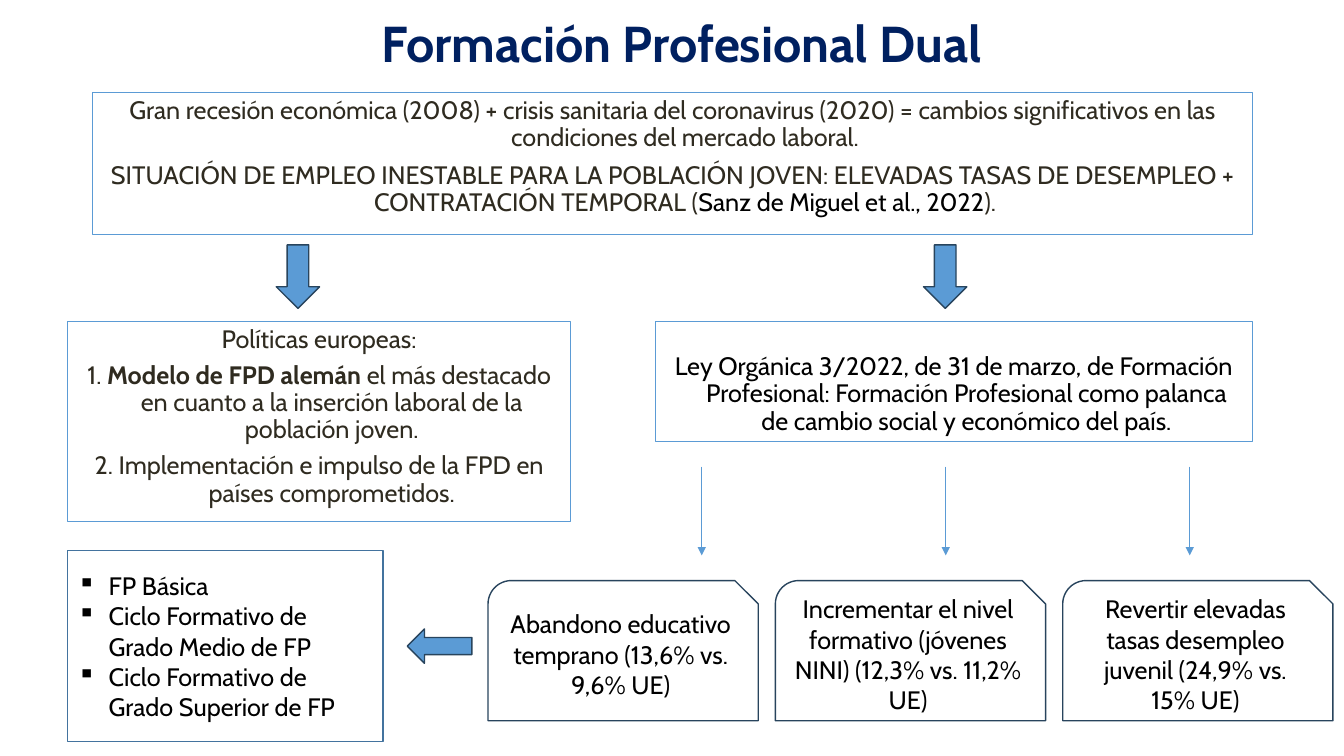
from lxml.etree import SubElement
from pptx import Presentation
from pptx.dml.color import RGBColor
from pptx.enum.shapes import MSO_CONNECTOR, MSO_SHAPE
from pptx.enum.text import MSO_ANCHOR, PP_ALIGN
from pptx.oxml.ns import qn
from pptx.util import Pt

PX = 9144
FONT = "Cabin"
COLORS = {
    "title": "002060",
    "text": "2F2B20",
    "black": "000000",
    "blue": "5B9BD5",
    "list_line": "43739E",
    "dark_line": "28445D",
}


def px(*lengths):
    """Turn pixel lengths into EMU."""
    return [length * PX for length in lengths]


def color(name):
    """Look up a named colour."""
    return RGBColor.from_string(COLORS[name])


def write_text(box, paragraphs, size=18, ink="black", align=PP_ALIGN.CENTER,
               anchor=MSO_ANCHOR.TOP, spacing=None, before=0, indent=0,
               bullet=None, top=5):
    """Fill a shape with paragraphs, each a list of (text, format) spans."""
    frame = box.text_frame
    frame.word_wrap = True
    frame.vertical_anchor = anchor
    frame.margin_left, frame.margin_top, frame.margin_right, frame.margin_bottom = px(10, top, 10, 5)
    for index, spans in enumerate(paragraphs):
        para = frame.add_paragraph() if index else frame.paragraphs[0]
        para.alignment = align
        para.line_spacing = spacing
        para.space_before = Pt(before if index else 0)
        properties = para._p.get_or_add_pPr()
        if indent:
            properties.set("marL", str(indent * PX))
            properties.set("indent", str(-indent * PX))
        if bullet:
            SubElement(properties, qn("a:buChar"), char=bullet)
        for text, style in spans:
            span = para.add_run()
            span.text = text
            span.font.name = FONT
            span.font.size = Pt(size)
            span.font.bold = style.get("bold", False)
            span.font.color.rgb = color(style.get("ink", ink))


def add_box(page, kind, place, line, width, fill=None):
    """Add an outlined shape, hollow unless a fill is named."""
    box = page.shapes.add_shape(kind, *px(*place))
    box.shadow.inherit = False
    if fill:
        box.fill.solid()
        box.fill.fore_color.rgb = color(fill)
    else:
        box.fill.background()
    box.line.color.rgb = color(line)
    box.line.width = Pt(width)
    return box


def add_block_arrow(page, kind, place):
    """Add a filled block arrow."""
    add_box(page, kind, place, "dark_line", 1, fill="blue")


def add_thin_arrow(page, x, top, bottom):
    """Add a thin downward arrow."""
    arrow = page.shapes.add_connector(MSO_CONNECTOR.STRAIGHT, *px(x, top, x, bottom))
    arrow.line.color.rgb = color("blue")
    arrow.line.width = Pt(0.5)
    SubElement(arrow.line._get_or_add_ln(), qn("a:tailEnd"), type="triangle")
    SubElement(arrow._element.spPr, qn("a:effectLst"))


def add_title(page, place):
    """Add the heading."""
    box = page.shapes.add_textbox(*px(*place))
    write_text(box, [[("Formación Profesional Dual", {"bold": True})]], size=36,
               ink="title", anchor=MSO_ANCHOR.MIDDLE, spacing=0.9)


def add_context(page, place):
    """Add the economic context and the two arrows below it."""
    left, top, width, height = place
    box = add_box(page, MSO_SHAPE.RECTANGLE, place, "blue", 0.75)
    write_text(box, [
        [("Gran recesión económica (2008) + crisis sanitaria del coronavirus (2020) = "
          "cambios significativos en las condiciones del mercado laboral.", {})],
        [("SITUACIÓN DE EMPLEO INESTABLE PARA LA POBLACIÓN JOVEN: ELEVADAS TASAS DE "
          "DESEMPLEO + CONTRATACIÓN TEMPORAL (", {}),
         ("Sanz de Miguel et al., 2022", {"ink": "black"}), (").", {})],
    ], ink="text", spacing=0.9, before=7.3, indent=25)
    for offset in (182, 824):
        add_block_arrow(page, MSO_SHAPE.DOWN_ARROW, (left + offset, top + height + 10, 43, 63))


def add_policies(page, place):
    """Add the European policies."""
    box = add_box(page, MSO_SHAPE.RECTANGLE, place, "blue", 0.75)
    write_text(box, [
        [("Políticas europeas:", {})],
        [("1. ", {}), ("Modelo de FPD alemán ", {"bold": True}),
         ("el más destacado en cuanto a la inserción laboral de la población joven.", {})],
        [("2. Implementación e impulso de la FPD en países comprometidos.", {})],
    ], ink="text", spacing=0.9, before=6.3, indent=25)


def add_law(page, place):
    """Add the law and the three thin arrows below it."""
    left, top, width, height = place
    box = add_box(page, MSO_SHAPE.RECTANGLE, place, "blue", 0.75)
    write_text(box, [[("Ley Orgánica 3/2022, de 31 de marzo, de Formación Profesional: "
                       "Formación Profesional como palanca de cambio social y económico "
                       "del país.", {})]], spacing=0.9, indent=25, top=32)
    for index in range(3):
        add_thin_arrow(page, left + 46 + 242 * index, top + height + 25, top + height + 113)


def add_goals(page, place):
    """Add the row of goal cards and the arrow to their left."""
    left, top, width, height = place
    goals = (
        "Abandono educativo temprano (13,6% vs. 9,6% UE)",
        "Incrementar el nivel formativo (jóvenes NINI) (12,3% vs. 11,2% UE)",
        "Revertir elevadas tasas desempleo juvenil (24,9% vs. 15% UE)",
    )
    gap = 17
    card_width = (width - gap * (len(goals) - 1)) // len(goals)
    for index, goal in enumerate(goals):
        card = add_box(page, MSO_SHAPE.SNIP_ROUND_RECTANGLE,
                       (left + index * (card_width + gap), top, card_width, height),
                       "dark_line", 1)
        write_text(card, [[(goal, {})]], anchor=MSO_ANCHOR.MIDDLE)
    add_block_arrow(page, MSO_SHAPE.LEFT_ARROW, (left - 80, top + 48, 64, 34))


def add_programmes(page, place):
    """Add the bulleted list of programmes."""
    box = add_box(page, MSO_SHAPE.RECTANGLE, place, "list_line", 1)
    programmes = ("FP Básica", "Ciclo Formativo de Grado Medio de FP",
                  "Ciclo Formativo de Grado Superior de FP")
    write_text(box, [[(programme, {})] for programme in programmes], align=PP_ALIGN.LEFT,
               anchor=MSO_ANCHOR.MIDDLE, indent=31, bullet="▪")


def main():
    """Build and save the deck."""
    deck = Presentation()
    deck.slide_width, deck.slide_height = px(1333, 750)
    page = deck.slides.add_slide(deck.slide_layouts[6])
    add_title(page, (101, 9, 1150, 73))
    add_context(page, (92, 92, 1150, 141))
    add_policies(page, (67, 319, 499, 198))
    add_law(page, (650, 319, 592, 119))
    add_goals(page, (484, 576, 838, 139))
    add_programmes(page, (67, 546, 313, 190))
    deck.save("out.pptx")


if __name__ == "__main__":
    main()
